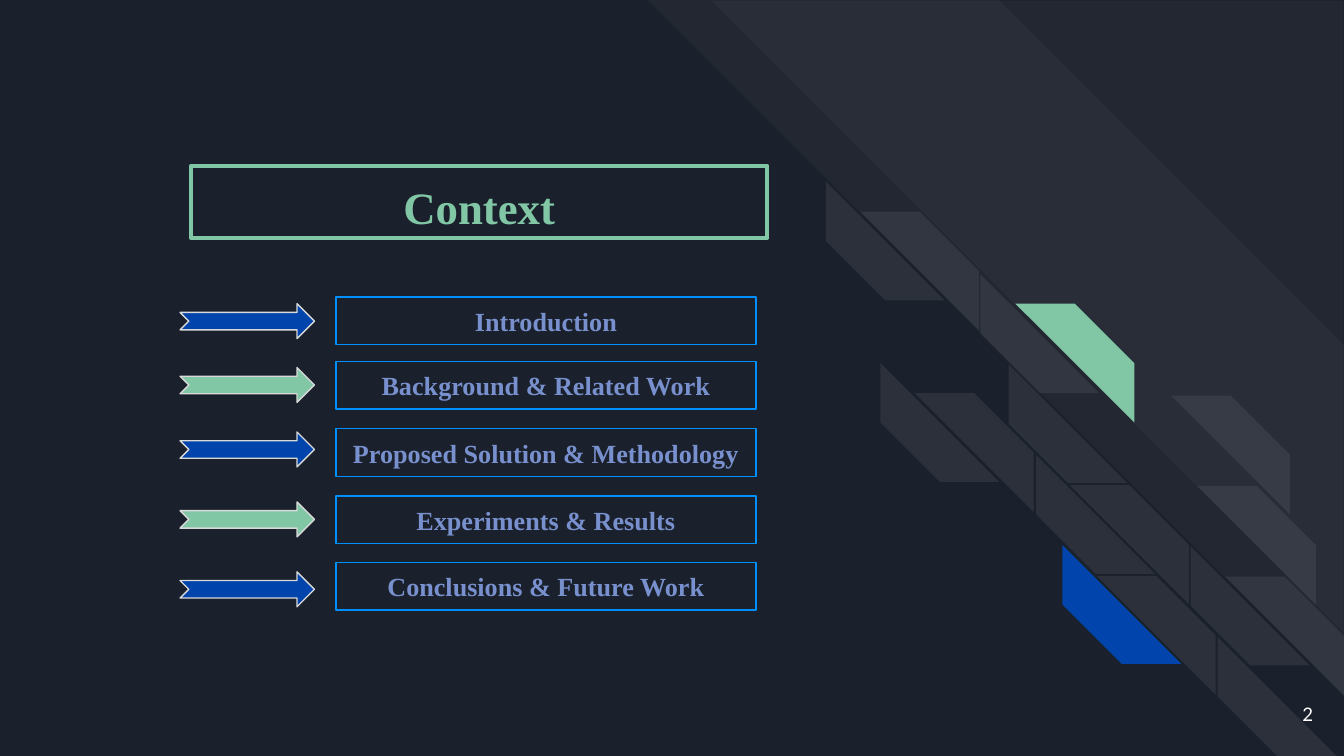
from typing import NamedTuple, Optional

from lxml.etree import SubElement
from pptx import Presentation
from pptx.dml.color import RGBColor
from pptx.enum.shapes import MSO_SHAPE as Shape
from pptx.enum.text import MSO_ANCHOR as Anchor, MSO_AUTO_SIZE as AutoSize, PP_ALIGN as Align
from pptx.oxml.ns import qn
from pptx.util import Emu, Pt

PX = 4572
NAVY = RGBColor(0x1B, 0x21, 0x2C)
WHITE = RGBColor(0xFF, 0xFF, 0xFF)
MINT = RGBColor(0x82, 0xC7, 0xA5)
BLUE = RGBColor(0x01, 0x45, 0xAC)
SKY = RGBColor(0x00, 0x8F, 0xFF)
PERIWINKLE = RGBColor(0x78, 0x90, 0xCD)
SILVER = RGBColor(0xD9, 0xD9, 0xD9)
SERIF = "Times New Roman"
DOWN, UP = 90, 270


class Stripe(NamedTuple):
    x: int
    y: int
    turn: int
    size: int = 177
    color: RGBColor = WHITE
    alpha: Optional[int] = 7
    adj: float = 0.5


class Topic(NamedTuple):
    text: str
    box_y: int
    arrow_y: int


STRIPES = [
    Stripe(964, 0, DOWN, 1036, alpha=3, adj=0.495),
    Stripe(1059, 1, DOWN, 940, alpha=3, adj=0),
    Stripe(1229, 270, UP),
    Stripe(1280, 315, DOWN),
    Stripe(1310, 540, UP),
    Stripe(1361, 585, DOWN),
    Stripe(1459, 408, UP),
    Stripe(1511, 452, DOWN, color=MINT, alpha=None),
    Stripe(1501, 542, UP),
    Stripe(1743, 589, DOWN),
    Stripe(1781, 723, DOWN),
    Stripe(1542, 677, UP),
    Stripe(1592, 722, DOWN),
    Stripe(1581, 811, UP, color=BLUE, alpha=None),
    Stripe(1632, 857, DOWN),
    Stripe(1772, 813, UP),
    Stripe(1823, 858, DOWN),
    Stripe(1812, 948, UP),
]

TOPICS = [
    Topic("Introduction", 442, 452),
    Topic("Background & Related Work", 538, 547),
    Topic("Proposed Solution & Methodology", 638, 643),
    Topic("Experiments & Results", 738, 747),
    Topic("Conclusions & Future Work", 837, 851),
]


def px(*values: int) -> list[Emu]:
    return [Emu(v * PX) for v in values]


def add_shape(s, kind, x: int, y: int, w: int, h: int,
              fill: Optional[RGBColor] = None, line: Optional[RGBColor] = None):
    sp = s.shapes.add_shape(kind, *px(x, y, w, h))
    sp.shadow.inherit = False
    if fill is None:
        sp.fill.background()
    else:
        sp.fill.solid()
        sp.fill.fore_color.rgb = fill
    if line is None:
        sp.line.fill.background()
    else:
        sp.line.color.rgb = line
        sp.line.width = Pt(0.75)
    return sp


def add_stripe(s, stripe: Stripe) -> None:
    sp = add_shape(s, Shape.DIAGONAL_STRIPE, stripe.x, stripe.y,
                   stripe.size, stripe.size, stripe.color)
    sp.adjustments[0] = stripe.adj
    sp.rotation = stripe.turn
    if stripe.alpha is not None:
        color = sp._element.spPr.find(qn("a:solidFill")).find(qn("a:srgbClr"))
        SubElement(color, qn("a:alpha")).set("val", str(stripe.alpha * 1000))


def write(sp, text: str, size: int, color: RGBColor, font: str = SERIF,
          bold: bool = True, align=Align.CENTER, anchor=Anchor.MIDDLE) -> None:
    tf = sp.text_frame
    tf.word_wrap = True
    tf.auto_size = AutoSize.NONE
    tf.vertical_anchor = anchor
    tf.margin_left, tf.margin_top, tf.margin_right, tf.margin_bottom = px(20, 20, 20, 20)
    p = tf.paragraphs[0]
    p.alignment = align
    r = p.add_run()
    r.text = text
    r.font.size = Pt(size)
    r.font.name = font
    r.font.bold = bold
    r.font.color.rgb = color


def add_title(s, text: str) -> None:
    sp = s.shapes.title
    sp.left, sp.top, sp.width, sp.height = px(284, 247, 858, 107)
    sp.line.color.rgb = MINT
    sp.line.width = Pt(2.25)
    write(sp, text, 24, MINT, anchor=Anchor.TOP)


def add_topic(s, topic: Topic, arrow_color: RGBColor) -> None:
    box = add_shape(s, Shape.RECTANGLE, 500, topic.box_y, 625, 71, line=SKY)
    write(box, topic.text, 14, PERIWINKLE)
    add_shape(s, Shape.NOTCHED_RIGHT_ARROW, 268, topic.arrow_y, 200, 52, arrow_color, SILVER)


def main() -> None:
    prs = Presentation()
    prs.slide_width, prs.slide_height = px(2000, 1125)
    s = prs.slides.add_slide(prs.slide_layouts[5])
    s.background.fill.solid()
    s.background.fill.fore_color.rgb = NAVY
    for stripe in STRIPES:
        add_stripe(s, stripe)
    add_title(s, "Context")
    for i, topic in enumerate(TOPICS):
        add_topic(s, topic, MINT if i % 2 else BLUE)
    number = s.shapes.add_textbox(*px(1854, 1020, 120, 86))
    write(number, "2", 10, WHITE, "Lato", bold=False, align=Align.RIGHT)
    prs.save("out.pptx")


if __name__ == "__main__":
    main()
